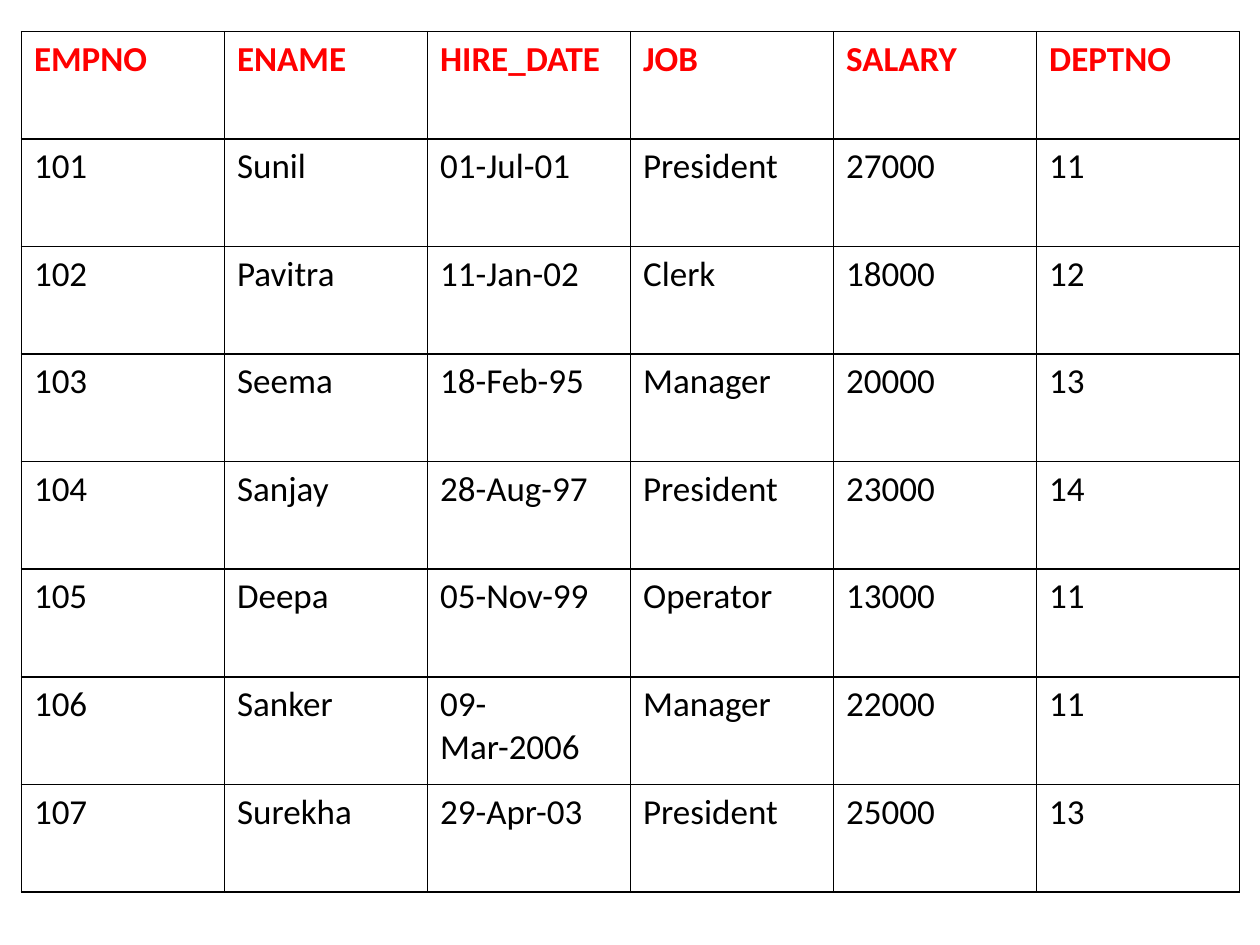
from dataclasses import dataclass

from lxml import etree
from pptx import Presentation
from pptx import util as u
from pptx.dml import color
from pptx.oxml import ns


@dataclass(frozen=True)
class Theme:
    font: str = "Calibri"
    size: int = 20
    head: str = "FF0000"
    body: str = "000000"
    rule: str = "000000"
    width: int = 1


THEME = Theme()

STAFF = [
    ("EMPNO", "ENAME", "HIRE_DATE", "JOB", "SALARY", "DEPTNO"),
    ("101", "Sunil", "01-Jul-01", "President", "27000", "11"),
    ("102", "Pavitra", "11-Jan-02", "Clerk", "18000", "12"),
    ("103", "Seema", "18-Feb-95", "Manager", "20000", "13"),
    ("104", "Sanjay", "28-Aug-97", "President", "23000", "14"),
    ("105", "Deepa", "05-Nov-99", "Operator", "13000", "11"),
    ("106", "Sanker", "09-Mar-2006", "Manager", "22000", "11"),
    ("107", "Surekha", "29-Apr-03", "President", "25000", "13"),
]


def write(frame, text, *, tint=THEME.body, bold=False):
    run = frame.paragraphs[0].add_run()
    run.text = text
    run.font.name = THEME.font
    run.font.size = u.Pt(THEME.size)
    run.font.bold = bold
    run.font.color.rgb = color.RGBColor.from_string(tint)


def border(cell):
    props = cell._tc.get_or_add_tcPr()
    for side in ("lnL", "lnR", "lnT", "lnB"):
        line = etree.SubElement(props, ns.qn(f"a:{side}"), w=str(u.Pt(THEME.width)))
        fill = etree.SubElement(line, ns.qn("a:solidFill"))
        etree.SubElement(fill, ns.qn("a:srgbClr"), val=THEME.rule)


def staff_table(slide, rows, left, top, width, height):
    table = slide.shapes.add_table(
        len(rows), len(rows[0]), left, top, width, height
    ).table
    table.first_row = False
    table.horz_banding = False
    for r, row in enumerate(rows):
        for c, text in enumerate(row):
            cell = table.cell(r, c)
            border(cell)
            cell.fill.background()
            tint = THEME.body if r else THEME.head
            write(cell.text_frame, text, tint=tint, bold=r == 0)


def main():
    deck = Presentation()
    deck.slide_width, deck.slide_height = u.Inches(10), u.Inches(7.5)
    slide = deck.slides.add_slide(deck.slide_layouts[6])
    box = [u.Inches(n) for n in (0.17, 0.25, 9.67, 6.83)]
    staff_table(slide, STAFF, *box)
    deck.save("out.pptx")


if __name__ == "__main__":
    main()
